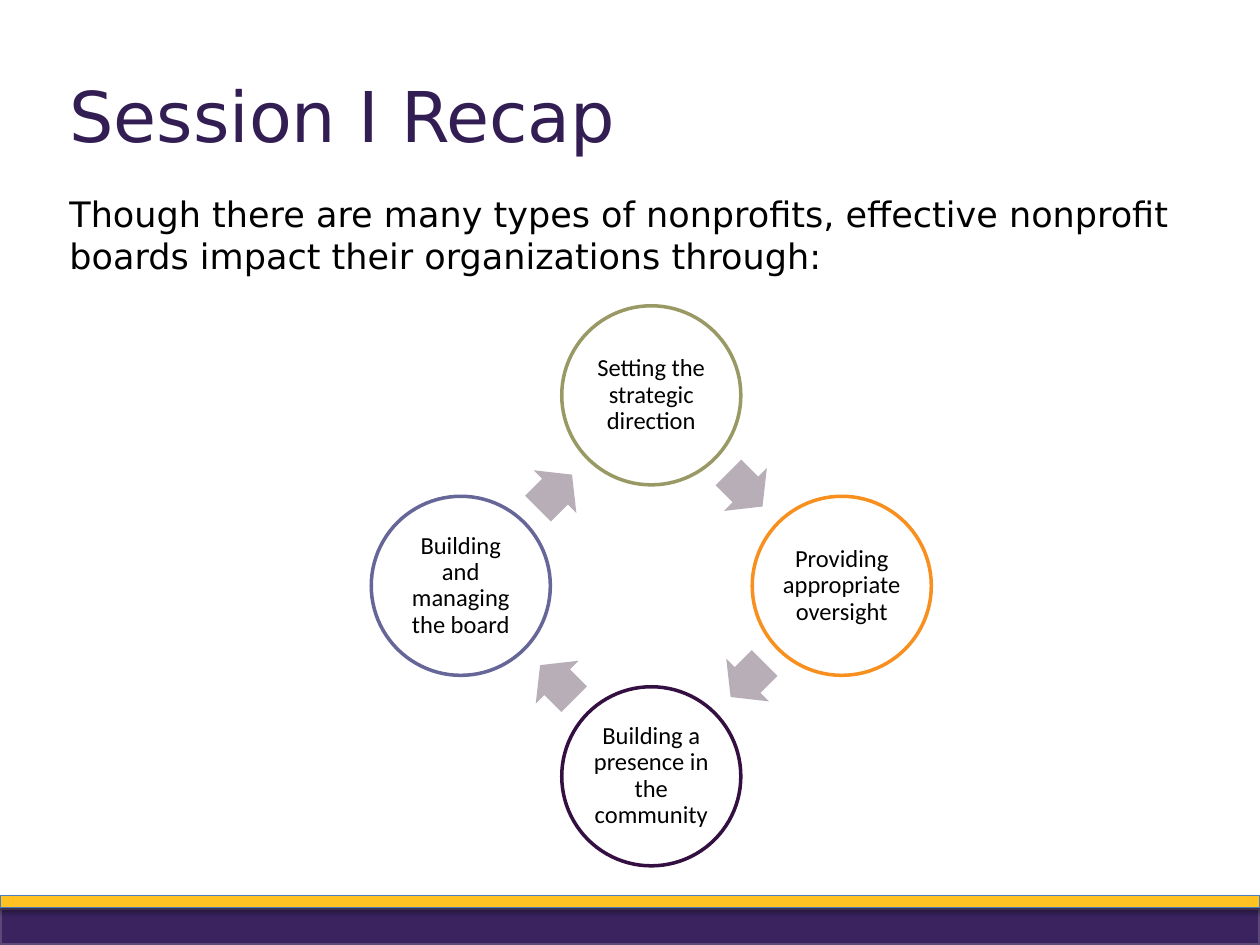
"""Build the Session I recap slide with a four-step board cycle."""
from math import cos, radians, sin

from lxml import etree
from pptx import Presentation
from pptx.dml.color import RGBColor
from pptx.enum.shapes import MSO_SHAPE
from pptx.enum.text import MSO_ANCHOR, PP_ALIGN
from pptx.oxml import parse_xml
from pptx.oxml.ns import nsdecls
from pptx.util import Cm, Pt

RECTANGLE, OVAL, ARROW = MSO_SHAPE.RECTANGLE, MSO_SHAPE.OVAL, MSO_SHAPE.RIGHT_ARROW
TOP, MIDDLE = MSO_ANCHOR.TOP, MSO_ANCHOR.MIDDLE
LEFT, CENTER = PP_ALIGN.LEFT, PP_ALIGN.CENTER

COLORS = {
    "white": "FFFFFF", "black": "000000", "title": "331E54",
    "purple": "3B2360", "purple edge": "5D4976",
    "gold": "FFC222", "gold edge": "4A7EBB",
    "olive": "999966", "orange": "F7901E", "plum": "330F42", "slate": "666699",
    "arrow": "B8AEB8",
}
TITLE = "Session I Recap"
INTRO = ("Though there are many types of nonprofits, effective nonprofit "
         "boards impact their organizations through:")
STEPS = [
    ("Setting the strategic direction", "olive"),
    ("Providing appropriate oversight", "orange"),
    ("Building a presence in the community", "plum"),
    ("Building and managing the board", "slate"),
]
SLIDE_WIDTH, SLIDE_HEIGHT = 25.4, 19.05
CENTER_X, CENTER_Y, RING_RADIUS = 13.13, 11.81, 3.84
CIRCLE_SIZE = 3.61
ARROW_WIDTH, ARROW_HEIGHT, ARROW_SETBACK = 0.97, 1.22, 0.03
SHADOW = (
    f'<a:effectLst {nsdecls("a")}><a:outerShdw blurRad="{Pt(3)}" dist="{Pt(1.8)}" '
    'dir="5400000" rotWithShape="0"><a:srgbClr val="000000"><a:alpha val="35000"/>'
    '</a:srgbClr></a:outerShdw></a:effectLst>'
)


def color(name):
    return RGBColor.from_string(COLORS[name])


def add_shape(slide, kind, box, fill, line=None, line_width=2):
    shape = slide.shapes.add_shape(kind, *(Cm(value) for value in box))
    shape.shadow.inherit = False
    shape.fill.solid()
    shape.fill.fore_color.rgb = color(fill)
    if line:
        shape.line.color.rgb = color(line)
        shape.line.width = Pt(line_width)
    else:
        shape.line.fill.background()
    return shape


def write(shape, text, font, size, ink, align, anchor, inset):
    frame = shape.text_frame
    frame.word_wrap = True
    frame.vertical_anchor = anchor
    frame.margin_left = frame.margin_right = Cm(inset)
    frame.margin_top = frame.margin_bottom = Cm(inset)
    paragraph = frame.paragraphs[0]
    paragraph.text = text
    paragraph.alignment = align
    paragraph.font.name = font
    paragraph.font.size = Pt(size)
    paragraph.font.color.rgb = color(ink)
    return paragraph


def add_text(slide, box, text, size, ink, anchor):
    textbox = slide.shapes.add_textbox(*(Cm(value) for value in box))
    return write(textbox, text, "DejaVu Sans", size, ink, LEFT, anchor, 0.13)


def add_footer(slide):
    add_shape(slide, RECTANGLE, (0, 18.31, SLIDE_WIDTH, 0.74), "purple", "purple edge")
    strip = add_shape(slide, RECTANGLE, (0, 18.06, SLIDE_WIDTH, 0.24),
                      "gold", "gold edge", 0.75)
    properties = strip.fill._xPr
    for effects in properties.findall(etree.QName(
            "http://schemas.openxmlformats.org/drawingml/2006/main", "effectLst").text):
        properties.replace(effects, parse_xml(SHADOW))


def add_cycle(slide):
    step_angle = 360 / len(STEPS)
    arrow_radius = RING_RADIUS * cos(radians(step_angle / 2))
    for index, (text, line) in enumerate(STEPS):
        angle = radians(index * step_angle - 90)
        x = CENTER_X + RING_RADIUS * cos(angle)
        y = CENTER_Y + RING_RADIUS * sin(angle)
        box = (x - CIRCLE_SIZE / 2, y - CIRCLE_SIZE / 2, CIRCLE_SIZE, CIRCLE_SIZE)
        circle = add_shape(slide, OVAL, box, "white", line)
        paragraph = write(circle, text, "Calibri", 14, "black", CENTER, MIDDLE, 0.05)
        paragraph.line_spacing = 0.9

        rotation = (index + 0.5) * step_angle
        heading, outward = radians(rotation), radians(rotation - 90)
        x = CENTER_X + arrow_radius * cos(outward) - ARROW_SETBACK * cos(heading)
        y = CENTER_Y + arrow_radius * sin(outward) - ARROW_SETBACK * sin(heading)
        box = (x - ARROW_WIDTH / 2, y - ARROW_HEIGHT / 2, ARROW_WIDTH, ARROW_HEIGHT)
        arrow = add_shape(slide, ARROW, box, "arrow")
        arrow.adjustments[0], arrow.adjustments[1] = 0.6, 0.5
        arrow.rotation = rotation


def main():
    presentation = Presentation()
    presentation.slide_width, presentation.slide_height = Cm(SLIDE_WIDTH), Cm(SLIDE_HEIGHT)
    slide = presentation.slides.add_slide(presentation.slide_layouts[6])
    add_footer(slide)
    add_text(slide, (1.27, 1.27, 22.86, 2.06), TITLE, 40, "title", MIDDLE)
    intro = add_text(slide, (1.27, 3.76, 22.86, 3.1), INTRO, 20, "black", TOP)
    intro.space_before = Pt(3)
    add_cycle(slide)
    presentation.save("out.pptx")


if __name__ == "__main__":
    main()
